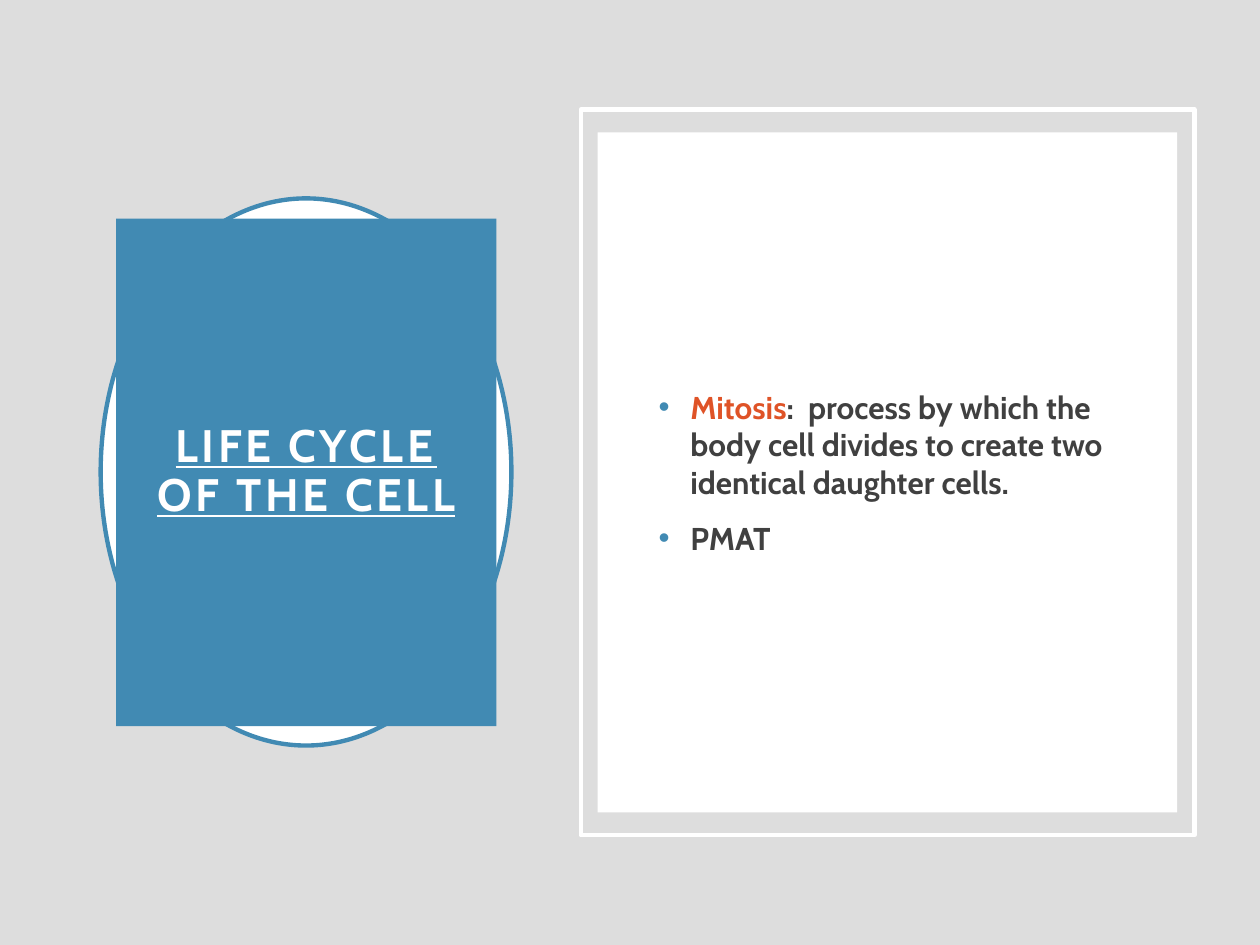
from dataclasses import dataclass

from lxml import etree
from pptx import Presentation
from pptx.dml.color import RGBColor
from pptx.enum.shapes import MSO_SHAPE
from pptx.enum.text import MSO_ANCHOR, PP_ALIGN
from pptx.oxml.ns import qn
from pptx.util import Cm, Pt

RECT, OVAL = MSO_SHAPE.RECTANGLE, MSO_SHAPE.OVAL
MIDDLE, CENTER = MSO_ANCHOR.MIDDLE, PP_ALIGN.CENTER


@dataclass(frozen=True)
class Theme:
    background: str = "DDDDDD"
    white: str = "FFFFFF"
    blue: str = "418AB3"
    orange: str = "DF5327"
    text: str = "404040"
    font: str = "Cabin"
    title_size: float = 26
    body_size: float = 18
    line_width: float = 2.5


class Deck:
    def __init__(self, theme):
        self.theme = theme
        self.prs = Presentation()
        self.prs.slide_width, self.prs.slide_height = Cm(25.4), Cm(19.05)
        self.s = None

    def slide(self):
        self.s = self.prs.slides.add_slide(self.prs.slide_layouts[6])
        fill = self.s.background.fill
        fill.solid()
        fill.fore_color.rgb = RGBColor.from_string(self.theme.background)

    def shape(self, kind, box, fill=None, line=None):
        sp = self.s.shapes.add_shape(kind, *map(Cm, box))
        sp.shadow.inherit = False
        if fill:
            sp.fill.solid()
            sp.fill.fore_color.rgb = RGBColor.from_string(fill)
        else:
            sp.fill.background()
        if line:
            sp.line.color.rgb = RGBColor.from_string(line)
            sp.line.width = Pt(self.theme.line_width)
        else:
            sp.line.fill.background()
        return sp

    def style(self, r, size, color):
        r.font.name = self.theme.font
        r.font.size = Pt(size)
        r.font.bold = True
        r.font.color.rgb = RGBColor.from_string(color)

    def title(self, box, text):
        tf = self.shape(RECT, box, fill=self.theme.blue).text_frame
        tf.word_wrap = True
        tf.vertical_anchor = MIDDLE
        tf.margin_left = tf.margin_right = Cm(0.5)
        tf.margin_top = tf.margin_bottom = Cm(0.5)
        tf.text = text
        p = tf.paragraphs[0]
        p.alignment = CENTER
        p.line_spacing = 0.9
        r = p.runs[0]
        self.style(r, self.theme.title_size, self.theme.white)
        r.font.underline = True
        r.font._element.set("spc", "200")

    def bullets(self, box, items):
        tf = self.s.shapes.add_textbox(*map(Cm, box)).text_frame
        tf.word_wrap = True
        tf.vertical_anchor = MIDDLE
        for i, runs in enumerate(items):
            p = tf.add_paragraph() if i else tf.paragraphs[0]
            p.space_before = Pt(10)
            self.bullet(p)
            for text, color in runs:
                r = p.add_run()
                r.text = text
                self.style(r, self.theme.body_size, color)

    def bullet(self, p):
        pPr = p._p.get_or_add_pPr()
        indent = Cm(0.64)
        pPr.set("marL", str(indent))
        pPr.set("indent", str(-indent))
        color = etree.SubElement(pPr, qn("a:buClr"))
        etree.SubElement(color, qn("a:srgbClr"), val=self.theme.blue)
        etree.SubElement(pPr, qn("a:buFont"), typeface="Arial")
        etree.SubElement(pPr, qn("a:buChar"), char="•")


def main():
    theme = Theme()
    deck = Deck(theme)
    deck.slide()
    deck.shape(OVAL, (2.03, 4, 8.28, 11.03), fill=theme.white, line=theme.blue)
    deck.title((2.34, 4.41, 7.67, 10.23), "LIFE CYCLE OF THE CELL")
    deck.shape(RECT, (11.71, 2.21, 12.37, 14.63), line=theme.white)
    deck.shape(RECT, (12.05, 2.67, 11.68, 13.71), fill=theme.white)
    deck.bullets((13.03, 4, 9.7, 11.03), [
        [("Mitosis", theme.orange),
         (":  process by which the body cell divides to create two "
          "identical daughter cells.", theme.text)],
        [("PMAT", theme.text)],
    ])
    deck.prs.save("out.pptx")


if __name__ == "__main__":
    main()
